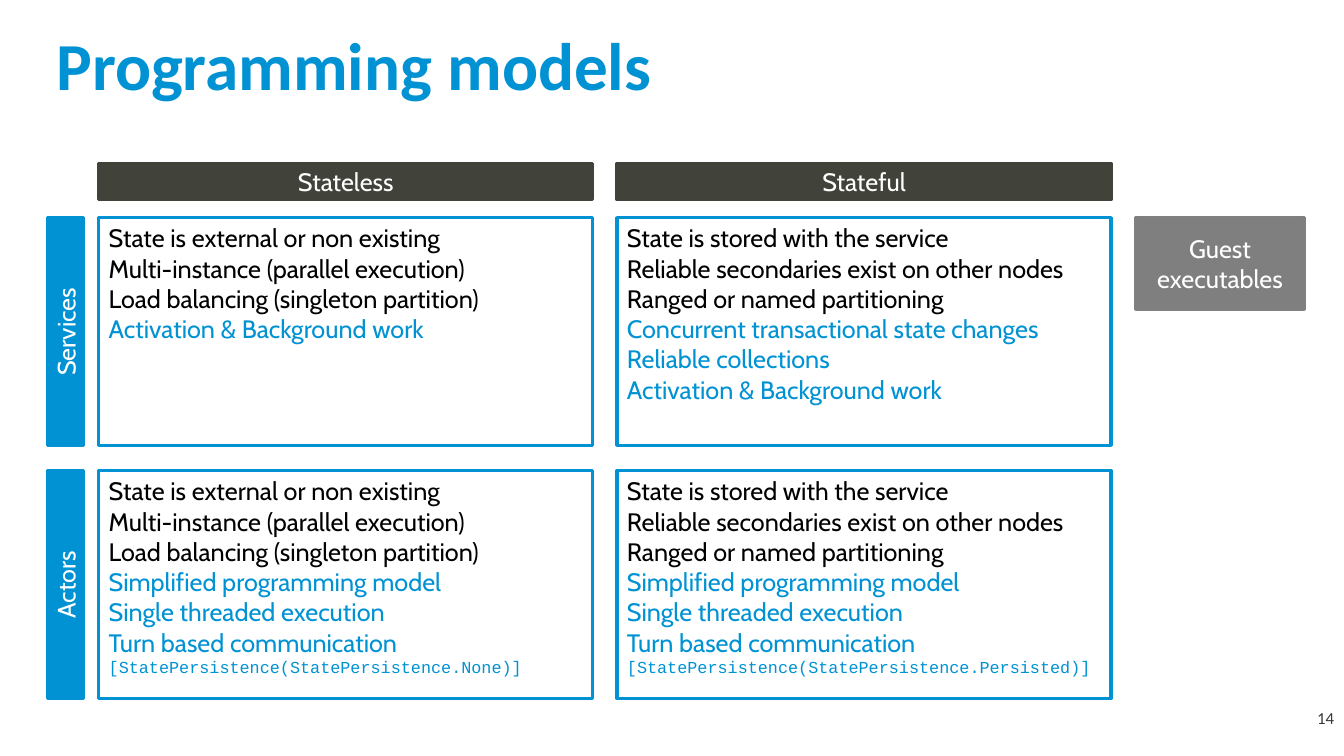
from pptx import Presentation
from pptx.dml.color import RGBColor
from pptx.enum.shapes import MSO_SHAPE
from pptx.enum.text import MSO_ANCHOR, PP_ALIGN
from pptx.util import Inches, Pt

RECTANGLE = MSO_SHAPE.RECTANGLE
TOP, MIDDLE = MSO_ANCHOR.TOP, MSO_ANCHOR.MIDDLE
LEFT, CENTER, RIGHT = PP_ALIGN.LEFT, PP_ALIGN.CENTER, PP_ALIGN.RIGHT

COLORS = {
    "blue": "0092D3",
    "dark": "41433B",
    "gray": "7F7F7F",
    "gray_line": "808080",
    "number": "363731",
    "black": "000000",
    "white": "FFFFFF",
}

TITLE = "Programming models"
SLIDE_NUMBER = "14"
GUEST = "Guest executables"
COLUMNS = ["Stateless", "Stateful"]
ROWS = ["Services", "Actors"]

STATE_TRAITS = {
    "Stateless": [
        "State is external or non existing",
        "Multi-instance (parallel execution)",
        "Load balancing (singleton partition)",
    ],
    "Stateful": [
        "State is stored with the service",
        "Reliable secondaries exist on other nodes",
        "Ranged or named partitioning",
    ],
}
BACKGROUND_WORK = "Activation & Background work"
ACTOR_TRAITS = [
    "Simplified programming model",
    "Single threaded execution",
    "Turn based communication",
]
MODEL_TRAITS = {
    ("Services", "Stateless"): [BACKGROUND_WORK],
    ("Services", "Stateful"): [
        "Concurrent transactional state changes",
        "Reliable collections",
        BACKGROUND_WORK,
    ],
    ("Actors", "Stateless"): ACTOR_TRAITS,
    ("Actors", "Stateful"): ACTOR_TRAITS,
}
ATTRIBUTES = {
    ("Actors", "Stateless"): ["[StatePersistence(StatePersistence.None)]"],
    ("Actors", "Stateful"): ["[StatePersistence(StatePersistence.Persisted)]"],
}

GRID_LEFT, GRID_TOP = 0.98, 2.16
COLUMN_STEP, ROW_STEP = 5.14, 2.51
CELL_WIDTH, CELL_HEIGHT = 4.9, 2.26
HEADER_TOP, BAR_THICKNESS = 1.62, 0.36
ROW_BAR_CENTER = 0.65


def rgb(name):
    return RGBColor.from_string(COLORS[name])


def write(shape, lines, align, anchor):
    frame = shape.text_frame
    frame.word_wrap = True
    frame.vertical_anchor = anchor
    frame.text = "\n".join(line[0] for line in lines)
    for paragraph, (_, font_name, size, color, bold) in zip(frame.paragraphs, lines):
        paragraph.alignment = align
        for run in paragraph.runs:
            run.font.name = font_name
            run.font.size = Pt(size)
            run.font.bold = bold
            run.font.color.rgb = rgb(color)


def body(text, color):
    return (text, "Cabin", 18, color, False)


def add_box(slide, place, fill, line, lines, align=CENTER, anchor=MIDDLE):
    shape = slide.shapes.add_shape(RECTANGLE, *map(Inches, place))
    shape.shadow.inherit = False
    shape.fill.solid()
    shape.fill.fore_color.rgb = rgb(fill)
    shape.line.color.rgb = rgb(line)
    shape.line.width = Pt(2.25)
    write(shape, lines, align, anchor)
    return shape


def add_label(slide, place, line, align):
    write(slide.shapes.add_textbox(*map(Inches, place)), [line], align, MIDDLE)


def main():
    presentation = Presentation()
    presentation.slide_width = Inches(13.33)
    presentation.slide_height = Inches(7.5)
    slide = presentation.slides.add_slide(presentation.slide_layouts[6])

    add_label(slide, (0.46, 0.3, 11.2, 0.67), (TITLE, "Calibri", 48, "blue", True), LEFT)

    for column_index, column in enumerate(COLUMNS):
        left = GRID_LEFT + column_index * COLUMN_STEP
        add_box(slide, (left, HEADER_TOP, CELL_WIDTH, BAR_THICKNESS),
                "dark", "dark", [body(column, "white")])
        for row_index, row in enumerate(ROWS):
            top = GRID_TOP + row_index * ROW_STEP
            lines = [body(text, "black") for text in STATE_TRAITS[column]]
            lines += [body(text, "blue") for text in MODEL_TRAITS[row, column]]
            lines += [(text, "Courier New", 12, "blue", False)
                      for text in ATTRIBUTES.get((row, column), [])]
            add_box(slide, (left, top, CELL_WIDTH, CELL_HEIGHT),
                    "white", "blue", lines, LEFT, TOP)

    for row_index, row in enumerate(ROWS):
        middle = GRID_TOP + row_index * ROW_STEP + CELL_HEIGHT / 2
        place = (ROW_BAR_CENTER - CELL_HEIGHT / 2, middle - BAR_THICKNESS / 2,
                 CELL_HEIGHT, BAR_THICKNESS)
        add_box(slide, place, "blue", "blue", [body(row, "white")]).rotation = 270

    add_box(slide, (11.26, GRID_TOP, 1.68, 0.91), "gray", "gray_line", [body(GUEST, "white")])
    add_label(slide, (12.87, 6.99, 0.46, 0.27),
              (SLIDE_NUMBER, "Calibri", 12, "number", False), RIGHT)

    presentation.save("out.pptx")


if __name__ == "__main__":
    main()
